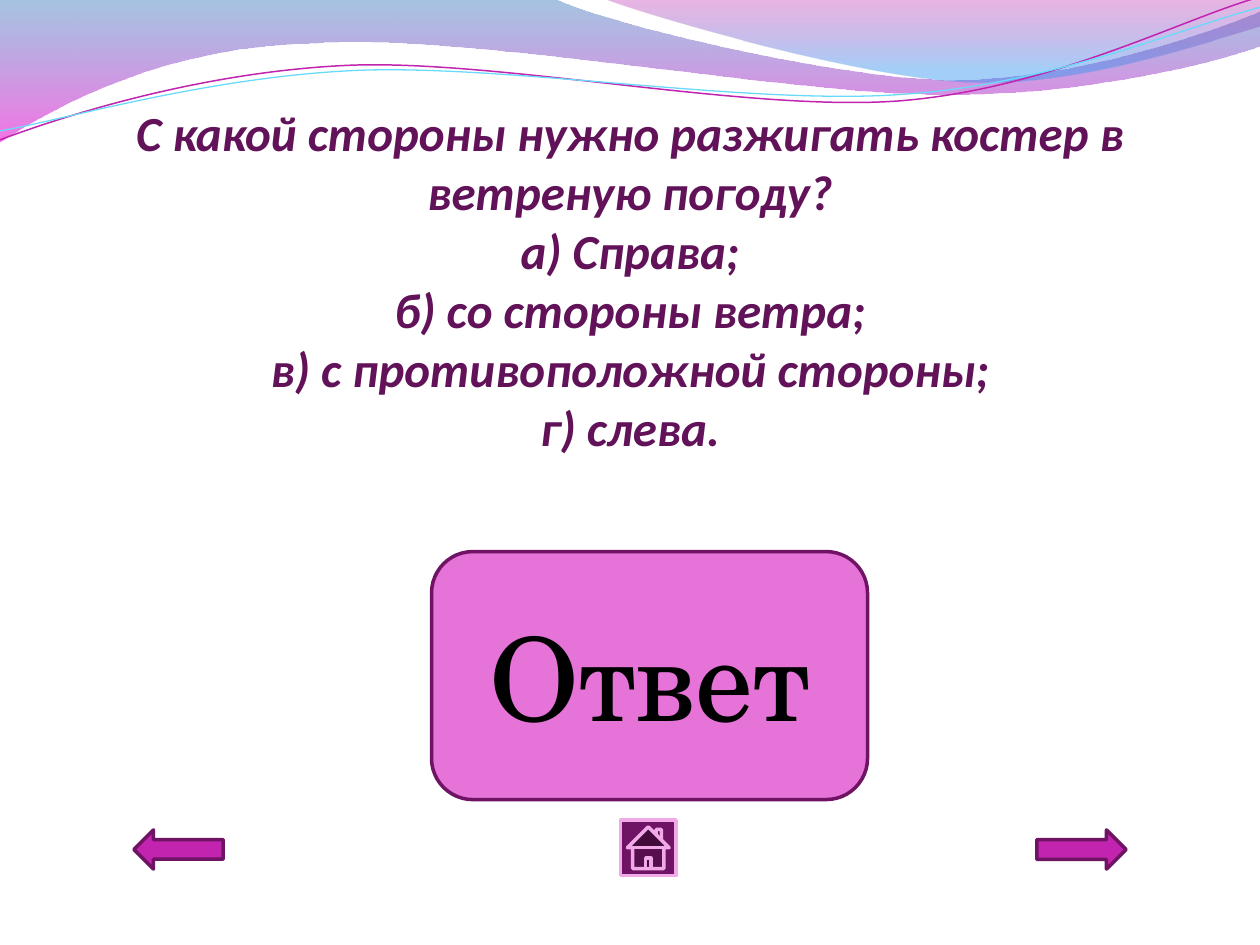
from dataclasses import dataclass

from lxml import etree
from pptx import Presentation
from pptx.dml.color import RGBColor
from pptx.enum.shapes import MSO_SHAPE
from pptx.enum.text import MSO_ANCHOR, PP_ALIGN
from pptx.oxml.ns import qn
from pptx.util import Cm, Pt

LEFT_ARROW = MSO_SHAPE.LEFT_ARROW
HOME_BUTTON = MSO_SHAPE.ACTION_BUTTON_HOME
ROUNDED = MSO_SHAPE.ROUNDED_RECTANGLE
CENTER = PP_ALIGN.CENTER
TOP, MIDDLE = MSO_ANCHOR.TOP, MSO_ANCHOR.MIDDLE
STRAND_ROTATION = 357.3


@dataclass(frozen=True)
class Theme:
    question: str = "611258"
    answer: str = "000000"
    button: str = "E573D8"
    arrow: str = "C224AF"
    dark: str = "6F1364"
    light: str = "F1A9E8"
    question_font: str = "Calibri"
    answer_font: str = "TeX Gyre Schola"
    question_size: int = 28
    answer_size: int = 66
    outline: float = 2


@dataclass(frozen=True)
class Stop:
    position: float
    color: str
    opacity: int


@dataclass(frozen=True)
class Band:
    """A filled wave; a segment is one point (line) or three (Bezier curve)."""
    start: tuple
    segments: tuple
    stops: tuple


@dataclass(frozen=True)
class Strand:
    start: tuple
    segments: tuple
    color: str
    width: float


@dataclass(frozen=True)
class Button:
    kind: int
    left: float
    top: float
    width: float
    height: float
    fill: str
    line: str
    rotation: float = 0


THEME = Theme()

BANDS = (
    Band((0, 0), (
        ((11.18, -0.03),),
        ((12.09, 0.43), (16.87, 1.6), (19.25, 1.6)),
        ((21.67, 1.6), (24.33, 0.66), (25.4, 0.23)),
        ((25.43, 0.91),),
        ((24.97, 1.12), (22.1, 1.93), (18.95, 1.9)),
        ((15.8, 1.9), (9.7, 0.71), (6.53, 0.86)),
        ((3.28, 0.91), (1.17, 2.11), (-0.03, 2.87)),
        ((0, 0),),
    ), (Stop(0, "377EBE", 45), Stop(1, "EC00D0", 55))),
    Band((12.17, -0.03), (
        ((12.93, 0.28), (17.32, 1.57), (19.53, 1.65)),
        ((21.74, 1.75), (24.41, 0.81), (25.4, 0.53)),
        ((25.4, 0),),
        ((12.17, -0.03),),
    ), (Stop(0, "B60BA2", 30), Stop(0.8, "3496F1", 45))),
)

STRANDS = (
    Strand((-0.05, 2.22), (
        ((1.19, 1.82), (4.02, 1.04), (7.05, 1.05)),
        ((10.05, 1.07), (15.02, 2.37), (18.08, 2.29)),
        ((21.13, 2.2), (23.86, 0.91), (25.41, 0.55)),
    ), "C124AF", 0.85),
    Strand((-0.04, 2.04), (
        ((1.16, 1.9), (4.17, 1.15), (7.2, 1.16)),
        ((10.25, 1.18), (15.13, 2.25), (18.19, 2.16)),
        ((21.21, 2.1), (23.93, 1.06), (25.45, 0.75)),
    ), "6ADAFA", 0.75),
)

NAVIGATION = (
    Button(LEFT_ARROW, 2.7, 16.73, 1.8, 0.79, THEME.arrow, THEME.dark),
    Button(LEFT_ARROW, 20.9, 16.73, 1.8, 0.79, THEME.arrow, THEME.dark, 180),
    Button(HOME_BUTTON, 12.51, 16.53, 1.12, 1.12, THEME.dark, THEME.light),
)
ANSWER = Button(ROUNDED, 8.7, 11.12, 8.79, 5, THEME.button, THEME.dark)

QUESTION = (
    "С какой стороны нужно разжигать костер в ветреную погоду?",
    "а) Справа;",
    "б) со стороны ветра;",
    "в) с противоположной стороны;",
    "г) слева.",
)


def rgb(color: str) -> RGBColor:
    return RGBColor.from_string(color)


def draw_outline(slide, outline, close: bool):
    """Build the outline from its points, then turn each triple into a curve."""
    points = [point for segment in outline.segments for point in segment]
    builder = slide.shapes.build_freeform(*(Cm(value) for value in outline.start))
    builder.add_line_segments([(Cm(x), Cm(y)) for x, y in points], close=close)
    shape = builder.convert_to_shape()
    shape.shadow.inherit = False

    lines = iter(list(shape._element.iter(qn("a:lnTo"))))
    for segment in outline.segments:
        steps = [next(lines) for _ in segment]
        if len(steps) == 3:
            curve = etree.Element(qn("a:cubicBezTo"))
            steps[0].addprevious(curve)
            for step in steps:
                curve.append(step[0])
                step.getparent().remove(step)
    return shape


def draw_band(slide, band: Band) -> None:
    shape = draw_outline(slide, band, True)
    shape.line.fill.background()
    shape.fill.gradient()
    shape.fill.gradient_angle = 270
    for gradient_stop, stop in zip(shape.fill.gradient_stops, band.stops):
        gradient_stop.position = stop.position
        gradient_stop.color.rgb = rgb(stop.color)
    colors = list(shape._element.spPr.iter(qn("a:srgbClr")))
    for color, stop in zip(colors, band.stops):
        etree.SubElement(color, qn("a:alpha"), val=str(stop.opacity * 1000))


def draw_strand(slide, strand: Strand) -> None:
    shape = draw_outline(slide, strand, False)
    shape.rotation = STRAND_ROTATION
    shape.fill.background()
    shape.line.color.rgb = rgb(strand.color)
    shape.line.width = Pt(strand.width)


def draw_button(slide, button: Button):
    place = (Cm(v) for v in (button.left, button.top, button.width, button.height))
    shape = slide.shapes.add_shape(button.kind, *place)
    shape.shadow.inherit = False
    shape.rotation = button.rotation
    shape.fill.solid()
    shape.fill.fore_color.rgb = rgb(button.fill)
    shape.line.color.rgb = rgb(button.line)
    shape.line.width = Pt(THEME.outline)
    return shape


def write_lines(frame, lines: tuple, font: str, size: int, color: str,
                emphasis: bool = False) -> None:
    """Write one centred paragraph with a line break between the lines."""
    frame.word_wrap = True
    para = frame.paragraphs[0]
    para.alignment = CENTER
    for index, line in enumerate(lines):
        if index:
            para.add_line_break()
        span = para.add_run()
        span.text = line
        span.font.name = font
        span.font.size = Pt(size)
        span.font.color.rgb = rgb(color)
        span.font.bold = span.font.italic = emphasis


def main() -> None:
    deck = Presentation()
    deck.slide_width, deck.slide_height = Cm(25.4), Cm(19.05)
    slide = deck.slides.add_slide(deck.slide_layouts[6])

    for band in BANDS:
        draw_band(slide, band)
    for strand in STRANDS:
        draw_strand(slide, strand)

    box = slide.shapes.add_textbox(Cm(1.27), Cm(1.95), Cm(22.86), Cm(9.17))
    frame = box.text_frame
    frame.margin_left = frame.margin_right = frame.margin_bottom = 0
    frame.vertical_anchor = TOP
    write_lines(frame, QUESTION, THEME.question_font, THEME.question_size,
                THEME.question, emphasis=True)

    for button in NAVIGATION:
        draw_button(slide, button)
    answer = draw_button(slide, ANSWER).text_frame
    answer.vertical_anchor = MIDDLE
    write_lines(answer, ("Ответ",), THEME.answer_font, THEME.answer_size, THEME.answer)

    deck.save("out.pptx")


if __name__ == "__main__":
    main()
